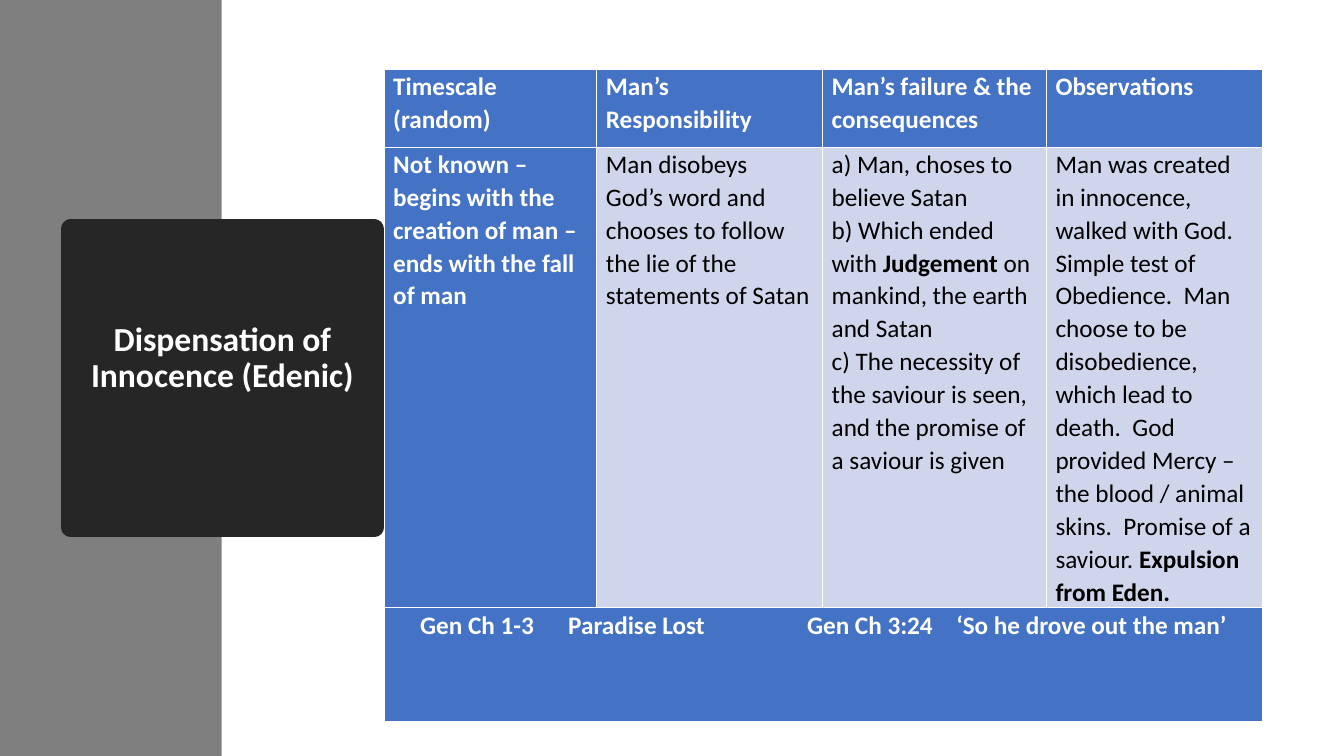
from dataclasses import dataclass
from lxml.etree import SubElement
from pptx import Presentation
from pptx.dml.color import RGBColor
from pptx.enum.shapes import MSO_SHAPE
from pptx.enum.text import MSO_ANCHOR, MSO_AUTO_SIZE, PP_ALIGN
from pptx.oxml.ns import qn
from pptx.util import Cm, Pt


@dataclass(frozen=True)
class Theme:
    font: str = "Calibri"
    white: RGBColor = RGBColor(0xFF, 0xFF, 0xFF)
    black: RGBColor = RGBColor(0, 0, 0)
    grey: RGBColor = RGBColor(0x7F, 0x7F, 0x7F)
    dark: RGBColor = RGBColor(0x26, 0x26, 0x26)
    blue: RGBColor = RGBColor(0x44, 0x72, 0xC4)
    pale: RGBColor = RGBColor(0xCF, 0xD5, 0xEA)
    head: Pt = Pt(24)
    body: Pt = Pt(18)


THEME = Theme()
WIDTH, HEIGHT = 33.87, 19.05

TITLE = "Dispensation of Innocence (Edenic)"
# Asterisks enclose bold words
HEADS = ["Timescale (random)", "Man’s Responsibility",
         "Man’s failure & the consequences", "Observations"]
BODY = [
    "Not known – begins with the creation of man – ends with the fall of man",
    "Man disobeys  God’s word and chooses to follow the lie of the "
    "statements of Satan",
    "a) Man, choses to believe Satan\n"
    "b) Which ended with *Judgement* on mankind, the earth and Satan\n"
    "c) The necessity of the saviour is seen, and the promise of a saviour "
    "is given",
    "Man was created in innocence, walked with God. Simple test of "
    "Obedience.  Man choose to be disobedience, which lead to death.  God "
    "provided Mercy – the blood / animal skins.  Promise of a saviour. "
    "*Expulsion from Eden.*",
]
FOOT = "Gen Ch 1-3\tParadise Lost\tGen Ch 3:24\t‘So he drove out the man’"
COLS = [5.36, 5.69, 5.64, 5.46]
ROWS = [1.96, 11.25, 2.87]
TABS = [3.73, 9.75, 13.51]


def style(run, size, color, bold):
    font = run.font
    font.name, font.size, font.bold = THEME.font, size, bold
    font.color.rgb = color


def add_band(slide, box):
    band = slide.shapes.add_shape(MSO_SHAPE.RECTANGLE, *map(Cm, box))
    band.shadow.inherit = False
    band.fill.solid()
    band.fill.fore_color.rgb = THEME.grey
    band.line.fill.background()
    # Send behind the title
    slide.shapes._spTree.insert(2, band._element)


def add_title(slide, box):
    title = slide.shapes.title
    title.left, title.top, title.width, title.height = map(Cm, box)
    title.fill.solid()
    title.fill.fore_color.rgb = THEME.dark
    title.line.color.rgb = THEME.dark
    title.line.width = Pt(13.75)
    SubElement(title.line._ln, qn("a:round"))
    frame = title.text_frame
    frame.text = TITLE
    frame.word_wrap = True
    frame.auto_size = MSO_AUTO_SIZE.NONE
    frame.vertical_anchor = MSO_ANCHOR.MIDDLE
    frame.margin_bottom = Cm(1.1)
    para = frame.paragraphs[0]
    para.alignment = PP_ALIGN.CENTER
    para.line_spacing = 0.9
    style(para.runs[0], THEME.head, THEME.white, True)


def fill_cell(cell, text, strong):
    cell.fill.solid()
    cell.fill.fore_color.rgb = THEME.blue if strong else THEME.pale
    cell.margin_left = cell.margin_right = Cm(0.23)
    cell.margin_top = cell.margin_bottom = 0
    color = THEME.white if strong else THEME.black
    frame = cell.text_frame
    frame.text = text
    for para in frame.paragraphs:
        para.line_spacing = 1.07
        parts = para.text.split("*")
        para.text = parts[0]
        for part in parts[1:]:
            para.add_run().text = part
        for i, run in enumerate(para.runs):
            style(run, THEME.body, color, strong or i % 2 == 1)


def set_tabs(para, stops):
    tabs = SubElement(para._p.get_or_add_pPr(), qn("a:tabLst"))
    for stop in stops:
        SubElement(tabs, qn("a:tab"), pos=str(Cm(stop)), algn="l")


def add_grid(slide, left, top):
    table = slide.shapes.add_table(
        len(ROWS), len(COLS), Cm(left), Cm(top),
        Cm(sum(COLS)), Cm(sum(ROWS))).table
    table.first_col = True
    for col, width in zip(table.columns, COLS):
        col.width = Cm(width)
    for row, height in zip(table.rows, ROWS):
        row.height = Cm(height)
    # Heading and body rows
    for r, texts in enumerate([HEADS, BODY]):
        for c, text in enumerate(texts):
            fill_cell(table.cell(r, c), text, r == 0 or c == 0)
    # Footer across all columns
    foot = table.cell(2, 0)
    foot.merge(table.cell(2, len(COLS) - 1))
    fill_cell(foot, FOOT, True)
    foot.margin_left = Cm(0.91)
    set_tabs(foot.text_frame.paragraphs[0], TABS)


def main():
    deck = Presentation()
    deck.slide_width, deck.slide_height = Cm(WIDTH), Cm(HEIGHT)
    slide = deck.slides.add_slide(deck.slide_layouts[5])
    add_band(slide, (0, 0, 5.59, HEIGHT))
    add_title(slide, (1.78, 5.77, 7.65, 7.52))
    add_grid(slide, 9.68, 1.75)
    deck.save("out.pptx")


if __name__ == "__main__":
    main()
